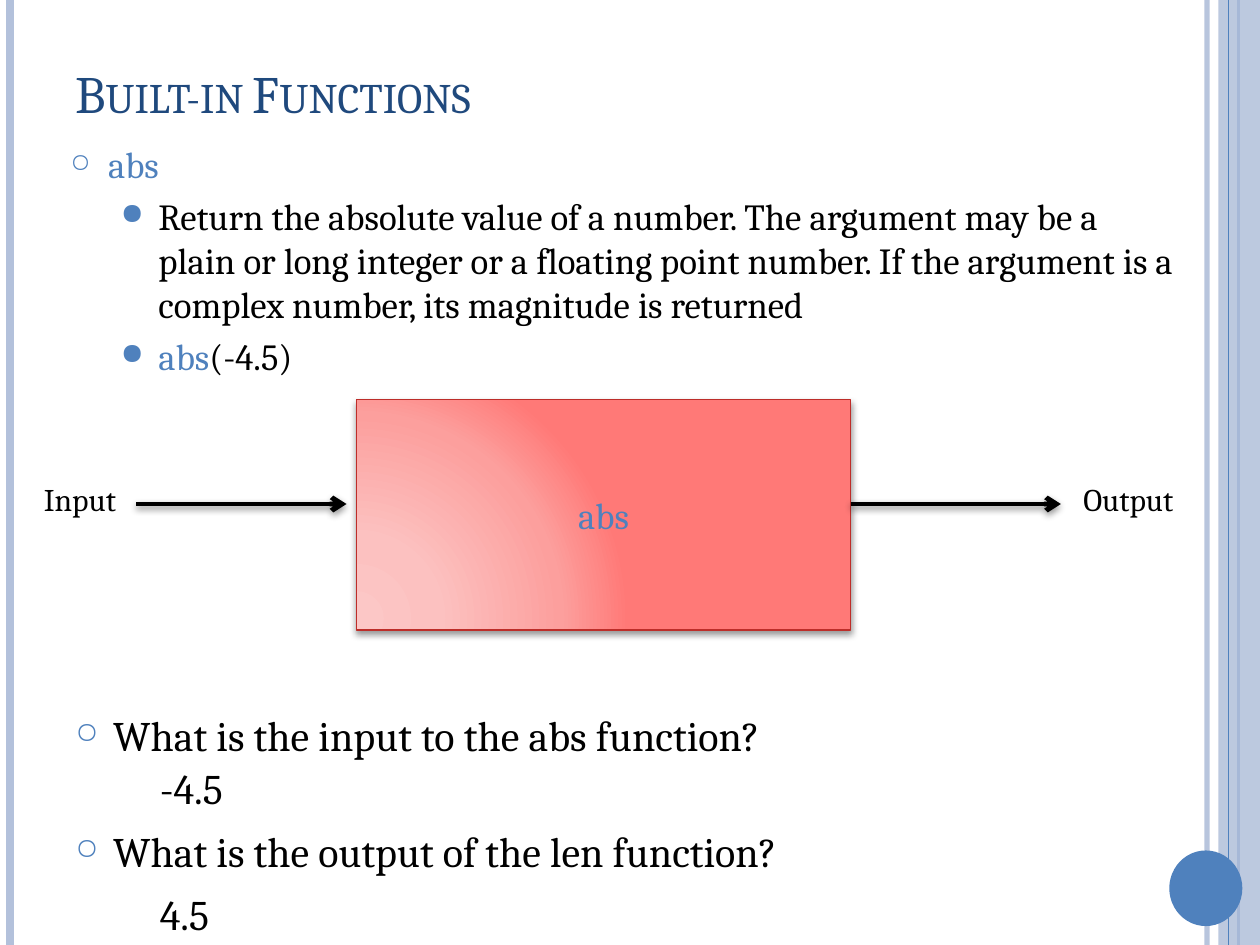
import lxml.etree
import pptx
import pptx.dml.color
import pptx.enum.shapes
import pptx.enum.text
import pptx.oxml
import pptx.oxml.ns
import pptx.util

WIDTH, HEIGHT = 10, 7.5
FONT = "Cambria"
COLORS = {"pale": "B3C1DB", "blue": "4F81BD", "navy": "1F497D",
          "black": "000000", "border": "BD2D29"}
BOX_GRADIENT = [(0, "FCC7C6"), (30, "FCC1C0"), (75, "FC9F9D"), (100, "FF7977")]

# x, colour, width in points, opacity in percent
RULES = [(9.58, "pale", 3, 93), (0.08, "pale", 4.5, 100), (9.83, "blue", 1.5, 100)]
FRONT_RULE = (9.75, "blue", 0.75, 100)

# bullet character, size in percent, indent, space before
CIRCLE = ("○", 70, 0.3, 6)
DISC = ("●", 80, 0.7, 4.2)

TITLE = "Built-in Functions"
BODY = [
    (CIRCLE, [("abs", "blue")]),
    (DISC, [("Return the absolute value of a number. The argument may be a plain or "
             "long integer or a floating point number. If the argument is a complex "
             "number, its magnitude is returned", "black")]),
    (DISC, [("abs", "blue"), ("(-4.5)", "black")]),
]
QUESTIONS = [("What is the input to the abs function?", 5.58, "-4.5", 6),
             ("What is the output of the len function?", 6.5, "4.5", 7)]

BOX = (2.83, 3.17, 3.92, 1.83)
ARROW_Y, ARROW_LENGTH = 4, 1.67
ARROW_STARTS = (1.08, BOX[0] + BOX[2])
LABELS = [("Input", 0.25), ("Output", 8.5)]

presentation = pptx.Presentation()
presentation.slide_width = pptx.util.Inches(WIDTH)
presentation.slide_height = pptx.util.Inches(HEIGHT)
slide = presentation.slides.add_slide(presentation.slide_layouts[6])


def inches(*lengths):
    return [pptx.util.Inches(length) for length in lengths]


def rgb(name):
    return pptx.dml.color.RGBColor.from_string(COLORS[name])


def add_child(parent, tag, **attributes):
    child = lxml.etree.SubElement(parent, pptx.oxml.ns.qn(tag))
    for key, value in attributes.items():
        child.set(key, str(value))
    return child


def set_opacity(properties, percent):
    for color in properties.iter(pptx.oxml.ns.qn("a:srgbClr")):
        add_child(color, "a:alpha", val=percent * 1000)


def add_shadow(effects, distance, percent):
    shadow = add_child(effects, "a:outerShdw", blurRad=pptx.util.Pt(4),
                       dist=pptx.util.Pt(distance), dir=90 * 60000, rotWithShape=0)
    color = add_child(shadow, "a:srgbClr", val=COLORS["black"])
    add_child(color, "a:alpha", val=percent * 1000)


def add_line(start, end, color, width):
    """Return a straight connector and its empty effect list."""
    line = slide.shapes.add_connector(
        pptx.enum.shapes.MSO_CONNECTOR.STRAIGHT, *inches(*start, *end))
    line.line.color.rgb = rgb(color)
    line.line.width = pptx.util.Pt(width)
    return line, add_child(line._element.spPr, "a:effectLst")


def add_rule(x, color, width, opacity):
    rule, _ = add_line((x, 0), (x, HEIGHT), color, width)
    if opacity < 100:
        set_opacity(rule._element.spPr, opacity)


def add_arrow(x):
    arrow, effects = add_line((x, ARROW_Y), (x + ARROW_LENGTH, ARROW_Y), "black", 2.75)
    add_child(arrow.line._get_or_add_ln(), "a:tailEnd", type="arrow")
    add_shadow(effects, 1.6, 42)


def add_shape(kind, position, color=None):
    shape = slide.shapes.add_shape(kind, *inches(*position))
    shape.shadow.inherit = False
    shape.line.fill.background()
    if color:
        shape.fill.solid()
        shape.fill.fore_color.rgb = rgb(color)
    return shape


def add_run(paragraph, text, color, size):
    run = paragraph.add_run()
    run.text = text
    run.font.name = FONT
    run.font.size = pptx.util.Pt(size)
    run.font.color.rgb = rgb(color)
    return run


def add_bullet(paragraph, character, percent, indent, space):
    paragraph.space_before = pptx.util.Pt(space)
    properties = paragraph._p.get_or_add_pPr()
    properties.set("marL", str(pptx.util.Inches(indent)))
    properties.set("indent", str(pptx.util.Inches(-0.3)))
    add_child(add_child(properties, "a:buClr"), "a:srgbClr", val=COLORS["blue"])
    add_child(properties, "a:buSzPct", val=percent * 1000)
    add_child(properties, "a:buChar", char=character)


def add_text(position, paragraphs, size, space=0):
    """Add a text box; each paragraph is a (bullet or None, runs) pair."""
    frame = slide.shapes.add_textbox(*inches(*position)).text_frame
    frame.word_wrap = True
    for index, (bullet, runs) in enumerate(paragraphs):
        paragraph = frame.add_paragraph() if index else frame.paragraphs[0]
        if bullet:
            add_bullet(paragraph, *bullet)
        else:
            paragraph.space_before = pptx.util.Pt(space)
        for text, color in runs:
            add_run(paragraph, text, color, size)
    return frame


def add_function_box():
    box = add_shape(pptx.enum.shapes.MSO_SHAPE.RECTANGLE, BOX)
    box.line.color.rgb = rgb("border")
    box.line.width = pptx.util.Pt(1)
    properties = box._element.spPr
    gradient = pptx.oxml.ns.qn("a:gradFill")
    gradient = lxml.etree.Element(gradient, rotWithShape="1")
    properties.insert(2, gradient)
    stops = add_child(gradient, "a:gsLst")
    for percent, color in BOX_GRADIENT:
        add_child(add_child(stops, "a:gs", pos=percent * 1000), "a:srgbClr", val=color)
    circle = add_child(gradient, "a:path", path="circle")
    add_child(circle, "a:fillToRect", l=5000, t=100000, r=120000, b=10000)
    add_shadow(properties.find(pptx.oxml.ns.qn("a:effectLst")), 2, 40)
    box.text_frame.vertical_anchor = pptx.enum.text.MSO_ANCHOR.MIDDLE
    paragraph = box.text_frame.paragraphs[0]
    paragraph.alignment = pptx.enum.text.PP_ALIGN.CENTER
    add_run(paragraph, "abs", "blue", 21)


for rule in RULES:
    add_rule(*rule)
band = add_shape(pptx.enum.shapes.MSO_SHAPE.RECTANGLE, (9.67, 0, 0.33, HEIGHT), "pale")
set_opacity(band._element.spPr, 87)
add_rule(*FRONT_RULE)
add_shape(pptx.enum.shapes.MSO_SHAPE.OVAL, (9.28, 6.75, 0.58, 0.6), "blue")

title = add_text((0.5, 0.3, 8.67, 0.87), [(None, [(TITLE, "navy")])], 30)
title.vertical_anchor = pptx.enum.text.MSO_ANCHOR.MIDDLE
title.paragraphs[0].runs[0].font._element.set("cap", "small")
add_text((0.46, 1.08, 8.96, 2.5), BODY, 21)

add_function_box()
for start in ARROW_STARTS:
    add_arrow(start)
for label, left in LABELS:
    add_text((left, 3.76, 1.33, 0.4), [(None, [(label, "black")])], 18)

for question, question_top, answer, answer_top in QUESTIONS:
    add_text((0.5, question_top, 8.75, 0.75), [(CIRCLE, [(question, "black")])], 24)
    add_text((1.17, answer_top, 3.5, 0.75), [(None, [(answer, "black")])], 24, space=6)

presentation.save("out.pptx")
